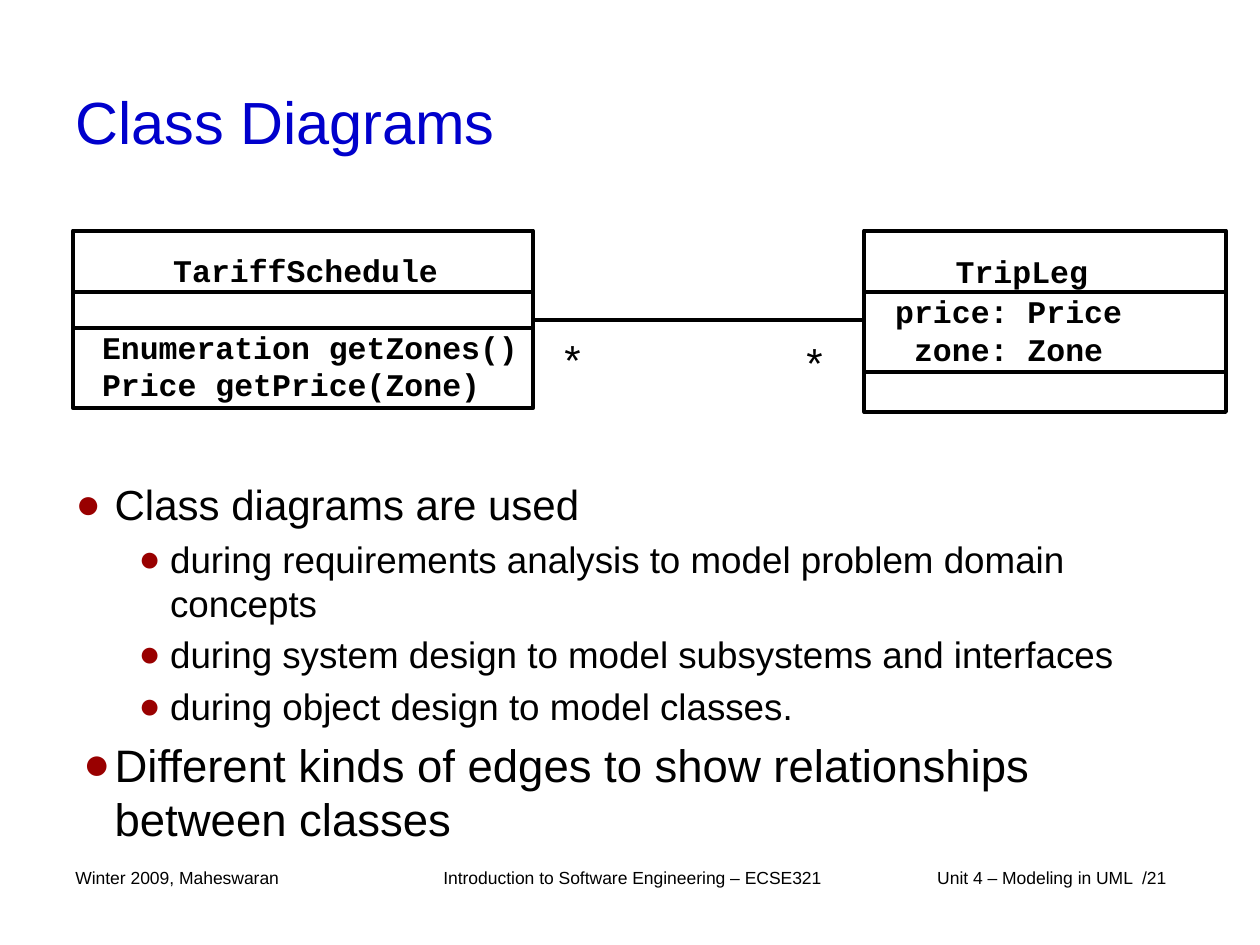
from lxml import etree
from pptx import Presentation
from pptx.dml.color import RGBColor
from pptx.enum.shapes import MSO_CONNECTOR, MSO_SHAPE
from pptx.enum.text import MSO_ANCHOR, MSO_AUTO_SIZE, PP_ALIGN
from pptx.oxml.ns import qn
from pptx.util import Inches, Pt

LEFT, CENTER = PP_ALIGN.LEFT, PP_ALIGN.CENTER
TOP, MIDDLE = MSO_ANCHOR.TOP, MSO_ANCHOR.MIDDLE
BLACK = RGBColor(0x00, 0x00, 0x00)
BLUE = RGBColor(0x00, 0x00, 0xCC)
DARK_RED = RGBColor(0x99, 0x00, 0x00)
SANS, MONO = "Arial", "Courier New"
LINE_WIDTH = Pt(2.25)

# Content
TITLE = "Class Diagrams"
# text, level, size, left margin, first-line indent
BULLETS = [
    ("Class diagrams are used", 0, 24, 0.31, -0.31),
    ("during requirements analysis to model problem domain concepts", 1, 21, 0.75, -0.25),
    ("during system design to model subsystems and interfaces", 1, 21, 0.75, -0.25),
    ("during object design to model classes.", 1, 21, 0.75, -0.25),
    ("Different kinds of edges to show relationships between classes", 0, 26, 0.31, -0.25),
]
# left, width, compartment heights, then labels: lines, box, alignment
CLASSES = [
    (0.58, 3.65, (0.49, 0.28, 0.64), [
        (["TariffSchedule"], (1.37, 1.99, 2.11, 0.3), CENTER),
        (["Enumeration getZones()", "Price getPrice(Zone)"], (0.81, 2.6, 3.42, 0.61), LEFT),
    ]),
    (6.86, 2.87, (0.49, 0.63, 0.32), [
        (["TripLeg"], (7.58, 2, 1.06, 0.3), CENTER),
        (["price: Price", "zone: Zone"], (7.1, 2.32, 1.81, 0.61), CENTER),
    ]),
]
CLASS_TOP = 1.83
ASSOCIATION = (4.24, 2.54, 6.86, 2.54)
MULTIPLICITIES = [("*", (4.38, 2.6, 0.33, 0.5)), ("*", (6.3, 2.62, 0.33, 0.5))]
FOOTERS = [
    ("Winter 2009, Maheswaran", (0.5, 6.83, 2.33, 0.5)),
    ("Introduction to Software Engineering – ECSE321", (3.42, 6.83, 3.33, 0.5)),
    ("Unit 4 – Modeling in UML  /21", (7.34, 6.83, 2.16, 0.5)),
]


def inches(values):
    return [Inches(value) for value in values]


def place(shape, box):
    shape.left, shape.top, shape.width, shape.height = inches(box)


def add_run(paragraph, text, size, font=SANS, color=BLACK, bold=False):
    run = paragraph.add_run()
    run.text = text
    run.font.name, run.font.size, run.font.bold = font, Pt(size), bold
    run.font.color.rgb = color


def add_label(slide, lines, box, size, font=SANS, bold=False, align=LEFT,
              anchor=TOP, inset=True, wrap=True):
    frame = slide.shapes.add_textbox(*inches(box)).text_frame
    frame.word_wrap = wrap
    frame.vertical_anchor = anchor
    if not inset:
        frame.margin_left = frame.margin_right = 0
        frame.margin_top = frame.margin_bottom = 0
    for i, line in enumerate(lines):
        paragraph = frame.add_paragraph() if i else frame.paragraphs[0]
        paragraph.alignment = align
        add_run(paragraph, line, size, font, bold=bold)


def set_bullet(paragraph, margin, indent):
    props = paragraph._p.get_or_add_pPr()
    props.set("marL", str(Inches(margin)))
    props.set("indent", str(Inches(indent)))
    color = etree.SubElement(props, qn("a:buClr"))
    etree.SubElement(color, qn("a:srgbClr")).set("val", str(DARK_RED))
    etree.SubElement(props, qn("a:buFont")).set("typeface", SANS)
    etree.SubElement(props, qn("a:buChar")).set("char", "●")


def add_class(slide, left, width, heights, labels):
    top = CLASS_TOP
    for height in heights:
        compartment = slide.shapes.add_shape(
            MSO_SHAPE.RECTANGLE, *inches((left, top, width, height)))
        compartment.shadow.inherit = False
        compartment.fill.background()
        compartment.line.color.rgb = BLACK
        compartment.line.width = LINE_WIDTH
        top += height
    for lines, box, align in labels:
        add_label(slide, lines, box, 18, MONO, bold=True, align=align,
                  inset=False, wrap=False)


def main():
    prs = Presentation()
    prs.slide_width, prs.slide_height = Inches(10), Inches(7.5)
    slide = prs.slides.add_slide(prs.slide_layouts[1])
    title, body = slide.placeholders

    # Title
    place(title, (0.5, 0.33, 9, 1.25))
    title.text_frame.vertical_anchor = MIDDLE
    heading = title.text_frame.paragraphs[0]
    heading.alignment = LEFT
    add_run(heading, TITLE, 34, color=BLUE)

    # Bullet list
    place(body, (0.5, 3.75, 9, 2.62))
    body.text_frame.auto_size = MSO_AUTO_SIZE.NONE
    for i, (text, level, size, margin, indent) in enumerate(BULLETS):
        frame = body.text_frame
        paragraph = frame.add_paragraph() if i else frame.paragraphs[0]
        paragraph.level = level
        set_bullet(paragraph, margin, indent)
        add_run(paragraph, text, size)

    # Class boxes
    for uml_class in CLASSES:
        add_class(slide, *uml_class)

    # Association and its multiplicities
    association = slide.shapes.add_connector(MSO_CONNECTOR.STRAIGHT, *inches(ASSOCIATION))
    association.line.color.rgb = BLACK
    association.line.width = LINE_WIDTH
    etree.SubElement(association._element.spPr, qn("a:effectLst"))
    for mark, box in MULTIPLICITIES:
        add_label(slide, [mark], box, 24, align=CENTER, anchor=MIDDLE, wrap=False)

    # Footer
    for text, box in FOOTERS:
        add_label(slide, [text], box, 10)

    prs.save("out.pptx")


if __name__ == "__main__":
    main()
